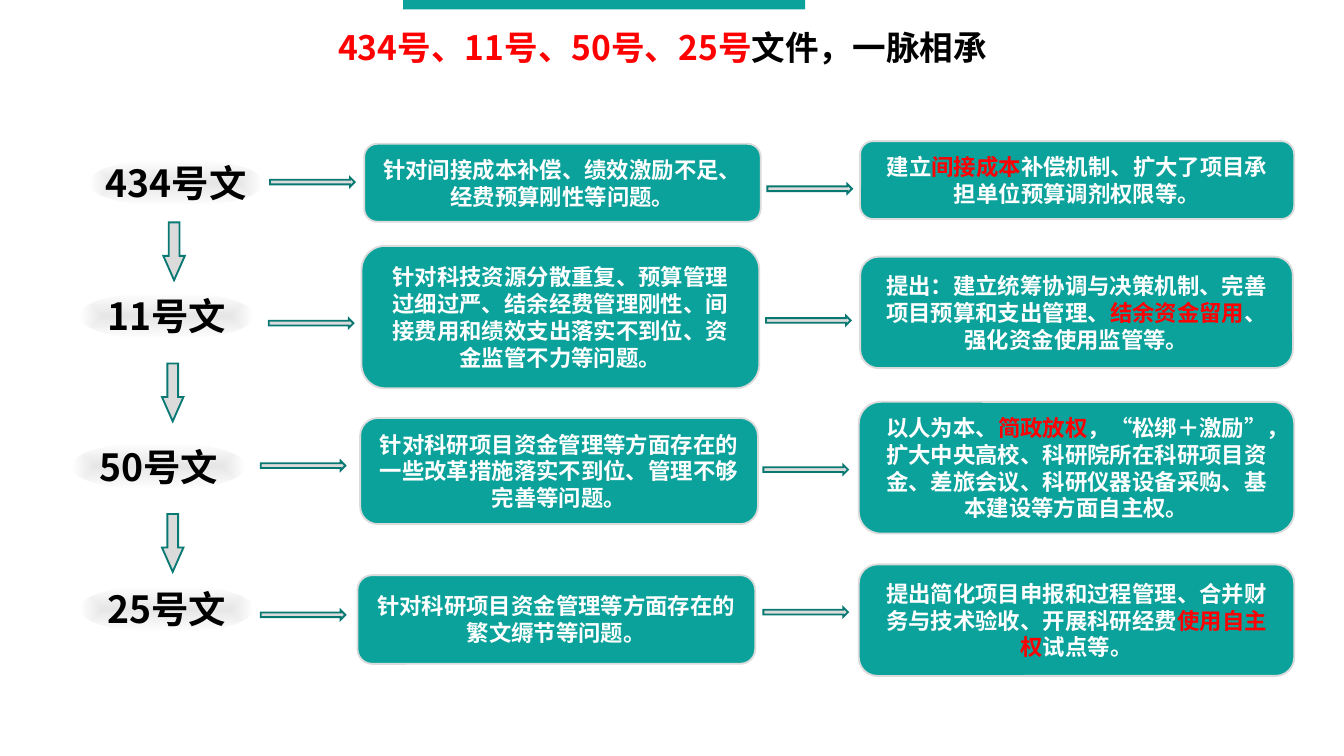
from lxml import etree
from pptx import Presentation
from pptx.dml.color import RGBColor
from pptx.enum.shapes import MSO_SHAPE
from pptx.enum.text import MSO_ANCHOR, PP_ALIGN
from pptx.oxml.ns import qn
from pptx.util import Pt

PX = 9144  # 100 px to the inch
RECT, ELLIPSE = MSO_SHAPE.RECTANGLE, MSO_SHAPE.OVAL
ARROW, CARD = MSO_SHAPE.RIGHT_ARROW, MSO_SHAPE.FLOWCHART_ALTERNATE_PROCESS
CENTER, MIDDLE = PP_ALIGN.CENTER, MSO_ANCHOR.MIDDLE
FONT = "Noto Sans CJK SC"
COLORS = {"teal": "0BA29B", "edge": "087873", "grey": "DBDBDB", "halo": "E7E6E6",
          "white": "FFFFFF", "black": "000000", "red": "FF0000"}

# Each row has its own box; positions inside it are relative to its corner.
ROWS = [
    {"box": (53, 105, 910, 60), "label": ("434号文", 13, 13),
     "arrows": [(148, 27), (518, 32)],
     "cards": [((218, 2, 295, 58), ["针对间接成本补偿、绩效激励不足、经费预算刚性等问题。"]),
               ((587, 0, 323, 58), ["建立", "间接成本", "补偿机制、扩大了项目承担单位预算调剂权限等。"])]},
    {"box": (53, 183, 910, 106), "label": ("11号文", 6, 34),
     "arrows": [(147, 54), (517, 52)],
     "cards": [((216, 0, 296, 106), ["针对科技资源分散重复、预算管理过细过严、结余经费管理刚性、"
                                     "间接费用和绩效支出落实不到位、资金监管不力等问题。"]),
               ((587, 8, 322, 83), ["提出：建立统筹协调与决策机制、完善项目预算和支出管理、",
                                    "结余资金留用", "、强化资金使用监管等。"])]},
    {"box": (53, 299, 910, 98), "label": ("50号文", 0, 30),
     "arrows": [(141, 44), (515, 47)],
     "cards": [((215, 12, 296, 79), ["针对科研项目资金管理等方面存在的一些改革措施落实不到位、"
                                     "管理不够完善等问题。"]),
               ((586, 0, 324, 98), ["以人为本、", "简政放权",
                                    "，“松绑＋激励”，扩大中央高校、科研院所在科研项目资金、"
                                    "差旅会议、科研仪器设备采购、基本建设等方面自主权。"])]},
    {"box": (53, 420, 910, 83), "label": ("25号文", 6, 15),
     "arrows": [(141, 34), (515, 32)],
     "cards": [((213, 8, 296, 66), ["针对科研项目资金管理等方面存在的繁文缛节等问题。"]),
               ((586, 0, 324, 83), ["提出简化项目申报和过程管理、合并财务与技术验收、开展科研经费",
                                    "使用自主权", "试点等。"])]},
]
DOWN_ARROWS = [(108, 179), (107, 284), (107, 396)]


def rgb(name):
    return RGBColor.from_string(COLORS[name])


def emu(box):
    return [v * PX for v in box]


def add_shape(s, kind, box, fill=None, line=None):
    sp = s.shapes.add_shape(kind, *emu(box))
    sp.shadow.inherit = False
    if fill:
        sp.fill.solid()
        sp.fill.fore_color.rgb = rgb(fill)
    if line:
        sp.line.color.rgb = rgb(line)
        sp.line.width = Pt(1)
        etree.SubElement(sp._element.spPr.find(qn("a:ln")), qn("a:miter"), lim="800000")
    else:
        sp.line.fill.background()
    return sp


def write(sp, parts, size, colors, wrap=True):
    """Fill one centred paragraph with runs, cycling through the colours."""
    tf = sp.text_frame
    tf.word_wrap = wrap
    p = tf.paragraphs[0]
    p.alignment = CENTER
    for i, text in enumerate(parts):
        r = p.add_run()
        r.text = text
        for name, value in {"size": Pt(size), "bold": True, "name": FONT}.items():
            setattr(r.font, name, value)
        r.font.color.rgb = rgb(colors[i % len(colors)])
        etree.SubElement(r.font._element, qn("a:ea"), typeface=FONT)


def radial_fill(sp, inner, outer):
    """Fade from the inner colour at the centre to the outer one."""
    sp.fill.gradient()
    for stop, color, position in zip(sp.fill.gradient_stops, (inner, outer), (0, 1)):
        stop.color.rgb = rgb(color)
        stop.position = position
    grad = sp._element.spPr.find(qn("a:gradFill"))
    linear = grad.find(qn("a:lin"))
    path = etree.Element(qn("a:path"), path="shape")
    etree.SubElement(path, qn("a:fillToRect"), l="50000", t="50000", r="50000", b="50000")
    grad.replace(linear, path)


def add_header(s, box):
    x, y, w, h = box
    add_shape(s, RECT, (x + 69, y, 299, 7), "teal")
    sp = s.shapes.add_textbox(*emu((x, y + 15, w, h - 15)))
    write(sp, ["434号、11号、50号、25号", "文件，一脉相承"], 18, ["red", "black"])


def add_row(s, row):
    x, y = row["box"][:2]
    text, dx, dy = row["label"]
    sp = add_shape(s, ELLIPSE, (x + dx, y + dy, 130, 36))
    radial_fill(sp, "halo", "white")
    sp.text_frame.vertical_anchor = MIDDLE
    write(sp, [text], 20, ["black"], wrap=False)
    for dx, dy in row["arrows"]:
        add_shape(s, ARROW, (x + dx, y + dy, 63, 7), "grey", "edge")
    for (dx, dy, w, h), parts in row["cards"]:
        sp = add_shape(s, CARD, (x + dx, y + dy, w, h), "teal", "grey")
        sp.text_frame.vertical_anchor = MIDDLE
        write(sp, parts, 12, ["white", "red"])


def add_down_arrow(s, x, y):
    sp = add_shape(s, ARROW, (x, y, 43, 16), "grey", "edge")
    sp.rotation = 90
    sp.adjustments[0], sp.adjustments[1] = 0.5, 1.13


def main():
    prs = Presentation()
    prs.slide_width = 1000 * PX
    prs.slide_height = prs.slide_width * 9 // 16
    s = prs.slides.add_slide(prs.slide_layouts[6])
    add_header(s, (231, 0, 524, 86))
    for row in ROWS:
        add_row(s, row)
    for x, y in DOWN_ARROWS:
        add_down_arrow(s, x, y)
    prs.save("out.pptx")


if __name__ == "__main__":
    main()
